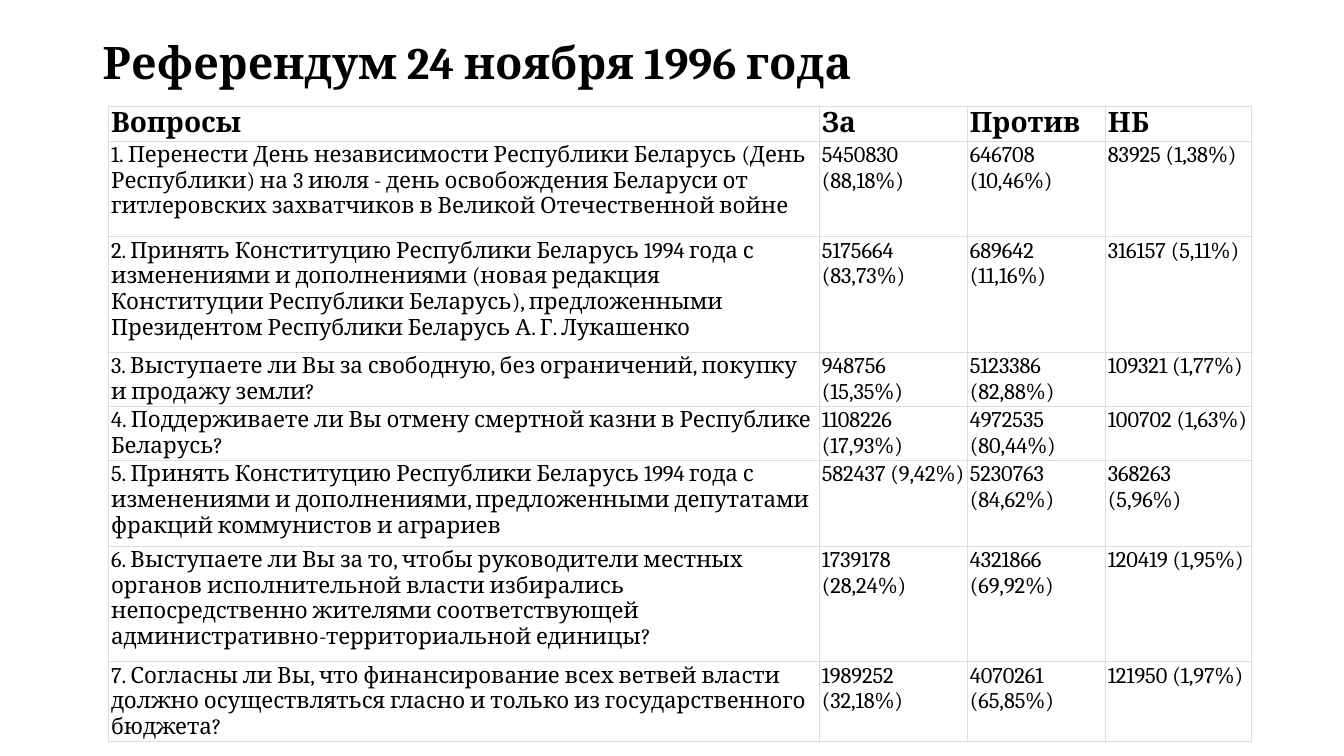
from lxml.etree import SubElement
from pptx import Presentation
from pptx.dml.color import RGBColor
from pptx.enum.text import MSO_ANCHOR, PP_ALIGN
from pptx.oxml.ns import qn
from pptx.util import Cm, Pt

TITLE = "Референдум 24 ноября 1996 года"
HEADER = ("Вопросы", "За", "Против", "НБ")
QUESTIONS = [
    ("1. Перенести День независимости Республики Беларусь (День Республики) на 3 июля - "
     "день освобождения Беларуси от гитлеровских захватчиков в Великой Отечественной войне",
     "5450830 (88,18%)", "646708 (10,46%)", "83925 (1,38%)"),
    ("2. Принять Конституцию Республики Беларусь 1994 года с изменениями и дополнениями "
     "(новая редакция Конституции Республики Беларусь), предложенными Президентом "
     "Республики Беларусь А. Г. Лукашенко",
     "5175664 (83,73%)", "689642 (11,16%)", "316157 (5,11%)"),
    ("3. Выступаете ли Вы за свободную, без ограничений, покупку и продажу земли?",
     "948756 (15,35%)", "5123386 (82,88%)", "109321 (1,77%)"),
    ("4. Поддерживаете ли Вы отмену смертной казни в Республике Беларусь?",
     "1108226 (17,93%)", "4972535 (80,44%)", "100702 (1,63%)"),
    ("5. Принять Конституцию Республики Беларусь 1994 года с изменениями и дополнениями, "
     "предложенными депутатами фракций коммунистов и аграриев",
     "582437 (9,42%)", "5230763 (84,62%)", "368263 (5,96%)"),
    ("6. Выступаете ли Вы за то, чтобы руководители местных органов исполнительной власти "
     "избирались непосредственно жителями соответствующей "
     "административно-территориальной единицы?",
     "1739178 (28,24%)", "4321866 (69,92%)", "120419 (1,95%)"),
    ("7. Согласны ли Вы, что финансирование всех ветвей власти должно осуществляться "
     "гласно и только из государственного бюджета?",
     "1989252 (32,18%)", "4070261 (65,85%)", "121950 (1,97%)"),
]
COL_WIDTHS = (17.91, 3.73, 3.48, 3.68)
ROW_HEIGHTS = (0.81, 2.41, 2.92, 1.12, 0.84, 2.16, 2.92, 1.88)


def rgb(value):
    return RGBColor.from_string(value)


class Deck:
    font = "Cambria"
    ink = "000000"
    paper = "FFFFFF"
    rule = "DDDDDD"

    def __init__(self, width, height):
        self.prs = Presentation()
        self.prs.slide_width, self.prs.slide_height = Cm(width), Cm(height)
        self.s = None

    def slide(self):
        self.s = self.prs.slides.add_slide(self.prs.slide_layouts[5])

    def style(self, p, size, bold):
        p.alignment = PP_ALIGN.LEFT
        p.font.name, p.font.size, p.font.bold = self.font, Pt(size), bold
        p.font.color.rgb = rgb(self.ink)

    def title(self, text, left, top, width, height):
        sp = self.s.shapes.title
        sp.left, sp.top, sp.width, sp.height = map(Cm, (left, top, width, height))
        tf = sp.text_frame
        tf.text = text
        tf.vertical_anchor = MSO_ANCHOR.MIDDLE
        p = tf.paragraphs[0]
        p.line_spacing = 0.9
        self.style(p, 32, True)

    def borders(self, cell):
        tc_pr = cell._tc.get_or_add_tcPr()
        for side in ("lnL", "lnR", "lnT", "lnB"):
            ln = SubElement(tc_pr, qn(f"a:{side}"), w=str(Pt(0.75)))
            fill = SubElement(ln, qn("a:solidFill"))
            SubElement(fill, qn("a:srgbClr"), val=self.rule)

    def cell(self, cell, text, size, bold):
        cell.margin_left = cell.margin_right = Cm(0.07)
        cell.margin_top = cell.margin_bottom = Cm(0.03)
        cell.vertical_anchor = MSO_ANCHOR.TOP
        self.borders(cell)
        cell.fill.solid()
        cell.fill.fore_color.rgb = rgb(self.paper)
        cell.text = text
        self.style(cell.text_frame.paragraphs[0], size, bold)

    def table(self, rows, left, top, widths, heights):
        frame = self.s.shapes.add_table(len(rows), len(widths), Cm(left), Cm(top),
                                        Cm(sum(widths)), Cm(sum(heights)))
        table = frame.table
        table.horz_banding = False
        for column, width in zip(table.columns, widths):
            column.width = Cm(width)
        for i, (row, height) in enumerate(zip(rows, heights)):
            table.rows[i].height = Cm(height)
            for j, text in enumerate(row):
                self.cell(table.cell(i, j), text, 16 if i else 20, i == 0)


def main():
    deck = Deck(33.87, 19.05)
    deck.slide()

    # Heading
    deck.title(TITLE, 2.33, 1.02, 29.21, 1.24)

    # Results by question
    deck.table([HEADER, *QUESTIONS], 2.73, 2.68, COL_WIDTHS, ROW_HEIGHTS)

    deck.prs.save("out.pptx")


if __name__ == "__main__":
    main()
